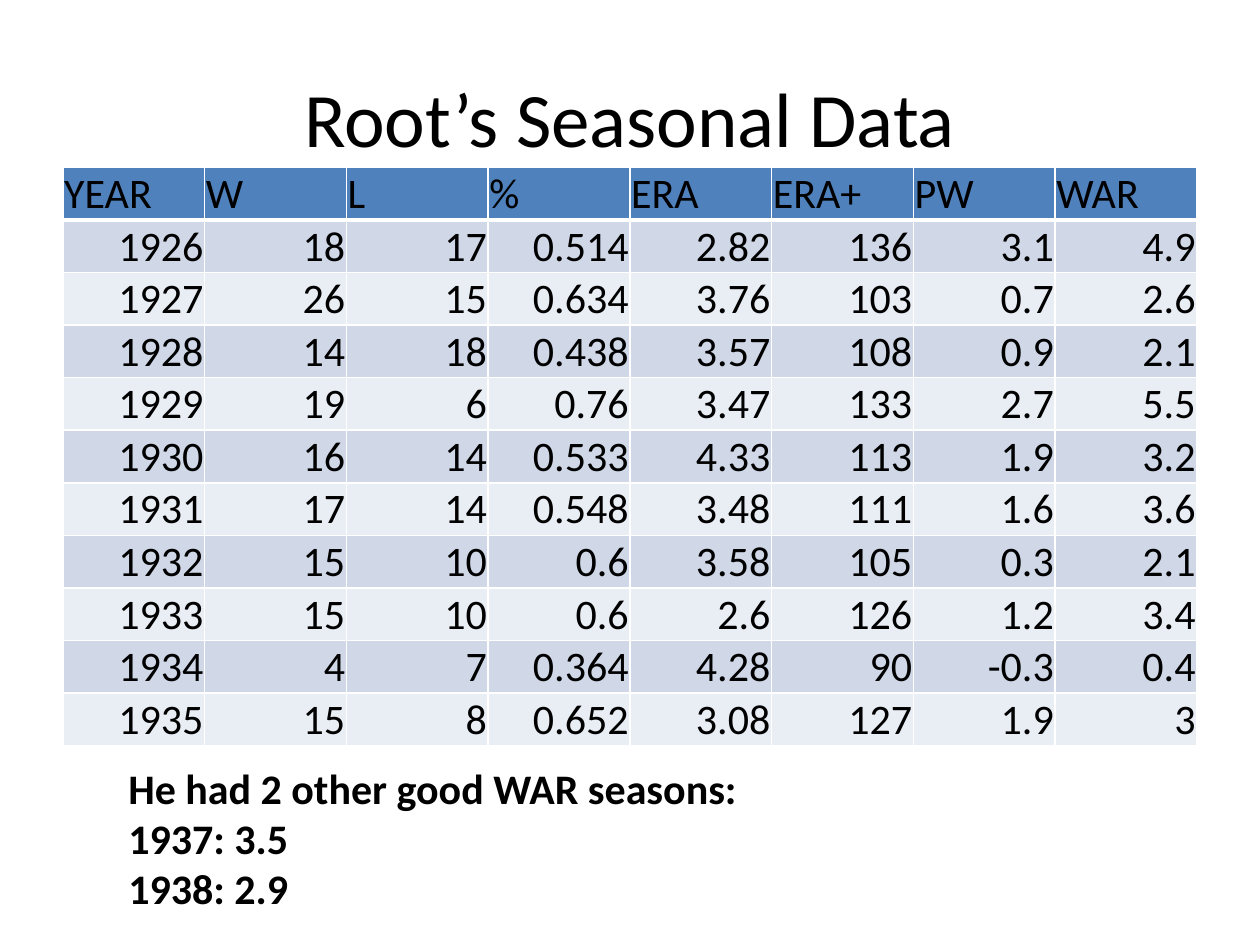
from dataclasses import dataclass

from lxml.etree import SubElement
from pptx import Presentation
from pptx.dml.color import RGBColor
from pptx.enum.text import MSO_ANCHOR, PP_ALIGN
from pptx.oxml.ns import qn
from pptx.util import Emu, Inches, Pt

FONT = "Calibri"
COLORS = {
    "text": "000000",
    "header": "4F81BD",
    "odd": "D0D8E8",
    "even": "E9EDF4",
    "border": "FFFFFF",
}
PAGE_WIDTH, PAGE_HEIGHT = Inches(10), Inches(7.5)
THIN, THICK = 1, 3


@dataclass(frozen=True)
class Area:
    left: float
    top: float
    width: float
    height: float

    def lengths(self) -> tuple[Emu, Emu, Emu, Emu]:
        return (
            Emu(round(self.left * PAGE_WIDTH)),
            Emu(round(self.top * PAGE_HEIGHT)),
            Emu(round(self.width * PAGE_WIDTH)),
            Emu(round(self.height * PAGE_HEIGHT)),
        )


@dataclass(frozen=True)
class Season:
    year: str
    wins: str
    losses: str
    share: str
    era: str
    era_plus: str
    pitching_wins: str
    war: str

    def values(self) -> list[str]:
        return [self.year, self.wins, self.losses, self.share,
                self.era, self.era_plus, self.pitching_wins, self.war]


TITLE_AREA = Area(0.05, 0.04, 0.9, 1 / 6)
TABLE_AREA = Area(0.05, 1.33 / 7.5, 0.9, 4.51 / 7.5)
NOTE_AREA = Area(0.092, 0.8, 0.858, 0.175)

HEADINGS = ["YEAR", "W", "L", "%", "ERA", "ERA+", "PW", "WAR"]
SEASONS = [
    Season("1926", "18", "17", "0.514", "2.82", "136", "3.1", "4.9"),
    Season("1927", "26", "15", "0.634", "3.76", "103", "0.7", "2.6"),
    Season("1928", "14", "18", "0.438", "3.57", "108", "0.9", "2.1"),
    Season("1929", "19", "6", "0.76", "3.47", "133", "2.7", "5.5"),
    Season("1930", "16", "14", "0.533", "4.33", "113", "1.9", "3.2"),
    Season("1931", "17", "14", "0.548", "3.48", "111", "1.6", "3.6"),
    Season("1932", "15", "10", "0.6", "3.58", "105", "0.3", "2.1"),
    Season("1933", "15", "10", "0.6", "2.6", "126", "1.2", "3.4"),
    Season("1934", "4", "7", "0.364", "4.28", "90", "-0.3", "0.4"),
    Season("1935", "15", "8", "0.652", "3.08", "127", "1.9", "3"),
]
NOTE_LINES = ["He had 2 other good WAR seasons:", "1937: 3.5", "1938: 2.9"]


def format_text(frame, size: int, align: PP_ALIGN, bold: bool = False) -> None:
    for para in frame.paragraphs:
        para.alignment = align
        for span in para.runs:
            span.font.name = FONT
            span.font.size = Pt(size)
            span.font.bold = bold
            span.font.color.rgb = RGBColor.from_string(COLORS["text"])


def set_borders(cell, top: int, bottom: int) -> None:
    properties = cell._tc.get_or_add_tcPr()
    widths = {"a:lnL": THIN, "a:lnR": THIN, "a:lnT": top, "a:lnB": bottom}
    for tag, width in widths.items():
        line = SubElement(properties, qn(tag), w=str(Pt(width)))
        fill = SubElement(line, qn("a:solidFill"))
        SubElement(fill, qn("a:srgbClr"), val=COLORS["border"])


def draw_cell(cell, text: str, row: int) -> None:
    set_borders(cell, THICK if row == 1 else THIN, THICK if row == 0 else THIN)
    cell.fill.solid()
    shade = "header" if row == 0 else "odd" if row % 2 else "even"
    cell.fill.fore_color.rgb = RGBColor.from_string(COLORS[shade])
    cell.margin_left = cell.margin_right = cell.margin_top = Inches(0.01)
    cell.margin_bottom = 0
    cell.vertical_anchor = MSO_ANCHOR.BOTTOM
    cell.text_frame.text = text
    format_text(cell.text_frame, 24, PP_ALIGN.RIGHT if row else PP_ALIGN.LEFT)


def draw_title(page, text: str) -> None:
    title = page.shapes.title
    title.left, title.top, title.width, title.height = TITLE_AREA.lengths()
    title.text_frame.text = text
    title.text_frame.vertical_anchor = MSO_ANCHOR.MIDDLE
    format_text(title.text_frame, 44, PP_ALIGN.CENTER)


def draw_seasons(page) -> None:
    grid = [HEADINGS] + [season.values() for season in SEASONS]
    table = page.shapes.add_table(len(grid), len(HEADINGS), *TABLE_AREA.lengths()).table
    for row, values in enumerate(grid):
        for column, text in enumerate(values):
            draw_cell(table.cell(row, column), text, row)


def draw_note(page) -> None:
    box = page.shapes.add_textbox(*NOTE_AREA.lengths())
    box.text_frame.word_wrap = True
    box.text_frame.text = "\n".join(NOTE_LINES)
    format_text(box.text_frame, 24, PP_ALIGN.LEFT, bold=True)


def main() -> None:
    deck = Presentation()
    deck.slide_width, deck.slide_height = PAGE_WIDTH, PAGE_HEIGHT
    page = deck.slides.add_slide(deck.slide_layouts.get_by_name("Title Only"))
    draw_title(page, "Root’s Seasonal Data")
    draw_seasons(page)
    draw_note(page)
    deck.save("out.pptx")


if __name__ == "__main__":
    main()
